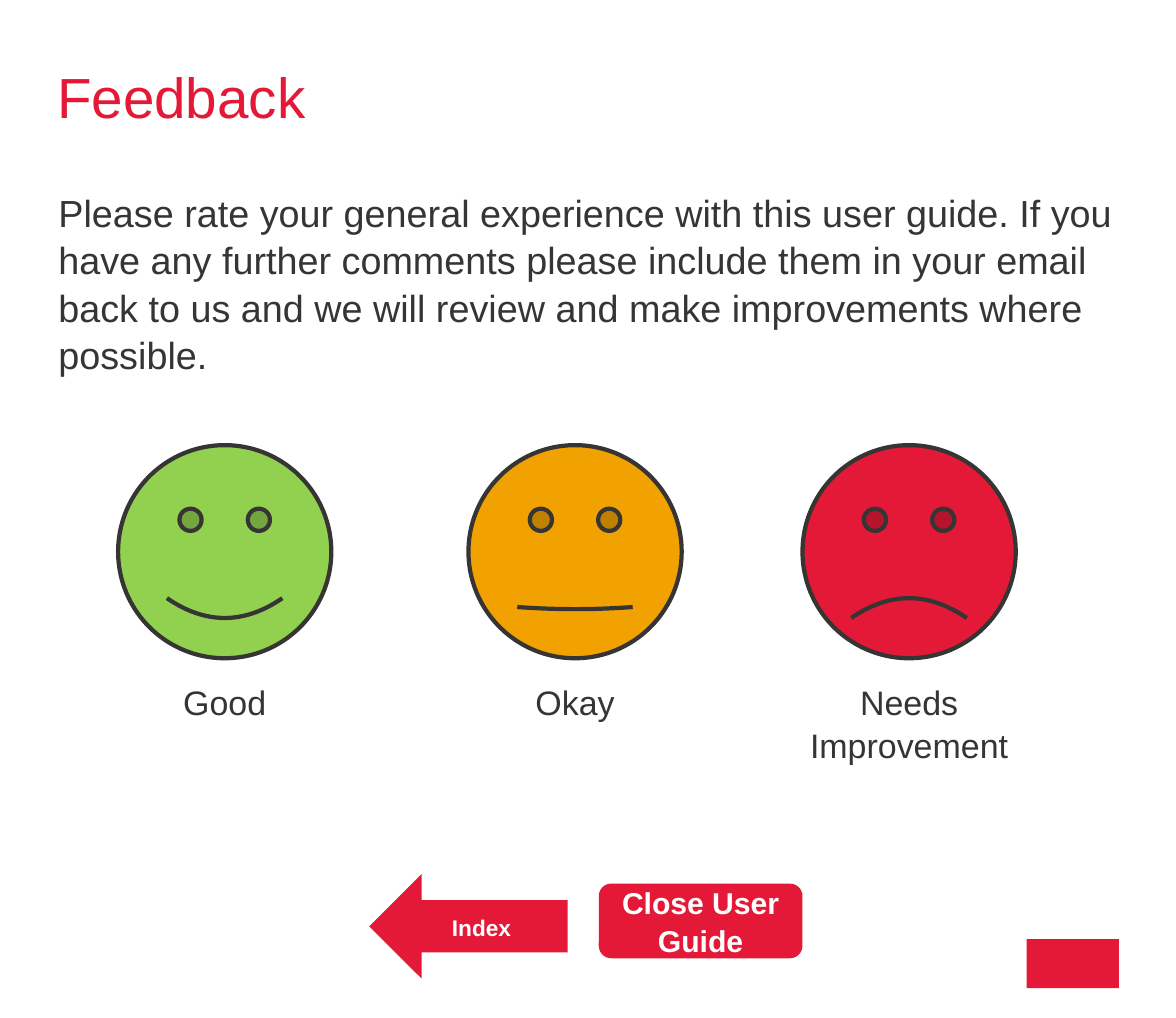
from pptx import Presentation
from pptx.dml.color import RGBColor
from pptx.enum.shapes import MSO_SHAPE as Shape
from pptx.enum.text import MSO_ANCHOR as Anchor, PP_ALIGN as Align
from pptx.util import Inches, Pt

RED = RGBColor(0xE3, 0x19, 0x37)
GREEN = RGBColor(0x92, 0xD0, 0x50)
AMBER = RGBColor(0xF2, 0xA2, 0x00)
CHARCOAL = RGBColor(0x36, 0x35, 0x34)
WHITE = RGBColor(0xFF, 0xFF, 0xFF)

FACE_SIZE = 1.57
LABEL_WIDTH = 2.2
RATINGS = [
    ("Good", 0.87, GREEN, 0.047),
    ("Okay", 3.45, AMBER, 0.005),
    ("Needs Improvement", 5.91, RED, -0.047),
]


def write(holder, text, size, color=CHARCOAL, bold=False, align=Align.LEFT,
          anchor=Anchor.TOP, side=0, spacing=1.05):
    frame = holder.text_frame
    frame.word_wrap = True
    frame.vertical_anchor = anchor
    frame.margin_left = frame.margin_right = Inches(side)
    frame.margin_top = frame.margin_bottom = 0
    paragraph = frame.paragraphs[0]
    paragraph.alignment = align
    paragraph.line_spacing = spacing
    paragraph.space_before = Pt(0)
    run = paragraph.add_run()
    run.text = text
    run.font.name = "Arial"
    run.font.size = Pt(size)
    run.font.bold = bold
    run.font.color.rgb = color


def add_filled(slide, kind, box, fill, outline=None):
    shape = slide.shapes.add_shape(kind, *map(Inches, box))
    shape.shadow.inherit = False
    shape.fill.solid()
    shape.fill.fore_color.rgb = fill
    if outline is None:
        shape.line.fill.background()
    else:
        shape.line.color.rgb = outline
        shape.line.width = Pt(2.25)
    return shape


def add_heading(slide, box):
    heading = slide.shapes.title
    heading.left, heading.top, heading.width, heading.height = map(Inches, box)
    write(heading, "Feedback", 30, color=RED, anchor=Anchor.MIDDLE, spacing=1)


def add_request(slide, box):
    request = slide.shapes.add_textbox(*map(Inches, box))
    write(request, "Please rate your general experience with this user guide. "
          "If you have any further comments please include them in your email "
          "back to us and we will review and make improvements where possible.", 20)


def add_rating(slide, left, top, caption, color, smile):
    face = add_filled(slide, Shape.SMILEY_FACE, (left, top, FACE_SIZE, FACE_SIZE),
                      color, CHARCOAL)
    face.adjustments[0] = smile
    label_left = left - (LABEL_WIDTH - FACE_SIZE) / 2
    label = slide.shapes.add_textbox(
        *map(Inches, (label_left, top + 1.73, LABEL_WIDTH, 0.61)))
    write(label, caption, 18, align=Align.CENTER)


def add_button(slide, kind, box, caption, size):
    button = add_filled(slide, kind, box, RED)
    write(button, caption, size, color=WHITE, bold=True, align=Align.CENTER,
          anchor=Anchor.MIDDLE, side=0.07)


def main():
    deck = Presentation()
    deck.slide_width, deck.slide_height = Inches(8.66), Inches(7.5)
    slide = deck.slides.add_slide(deck.slide_layouts[5])
    add_heading(slide, (0.42, 0.2, 7.81, 1.01))
    add_request(slide, (0.43, 1.38, 7.82, 1.4))
    for caption, left, color, smile in RATINGS:
        add_rating(slide, left, 3.28, caption, color, smile)
    add_button(slide, Shape.LEFT_ARROW, (2.72, 6.44, 1.46, 0.77), "Index", 12)
    add_button(slide, Shape.ROUNDED_RECTANGLE, (4.41, 6.51, 1.5, 0.55),
               "Close User Guide", 16)
    add_filled(slide, Shape.RECTANGLE, (7.56, 6.92, 0.68, 0.36), RED)
    deck.save("out.pptx")


if __name__ == "__main__":
    main()
